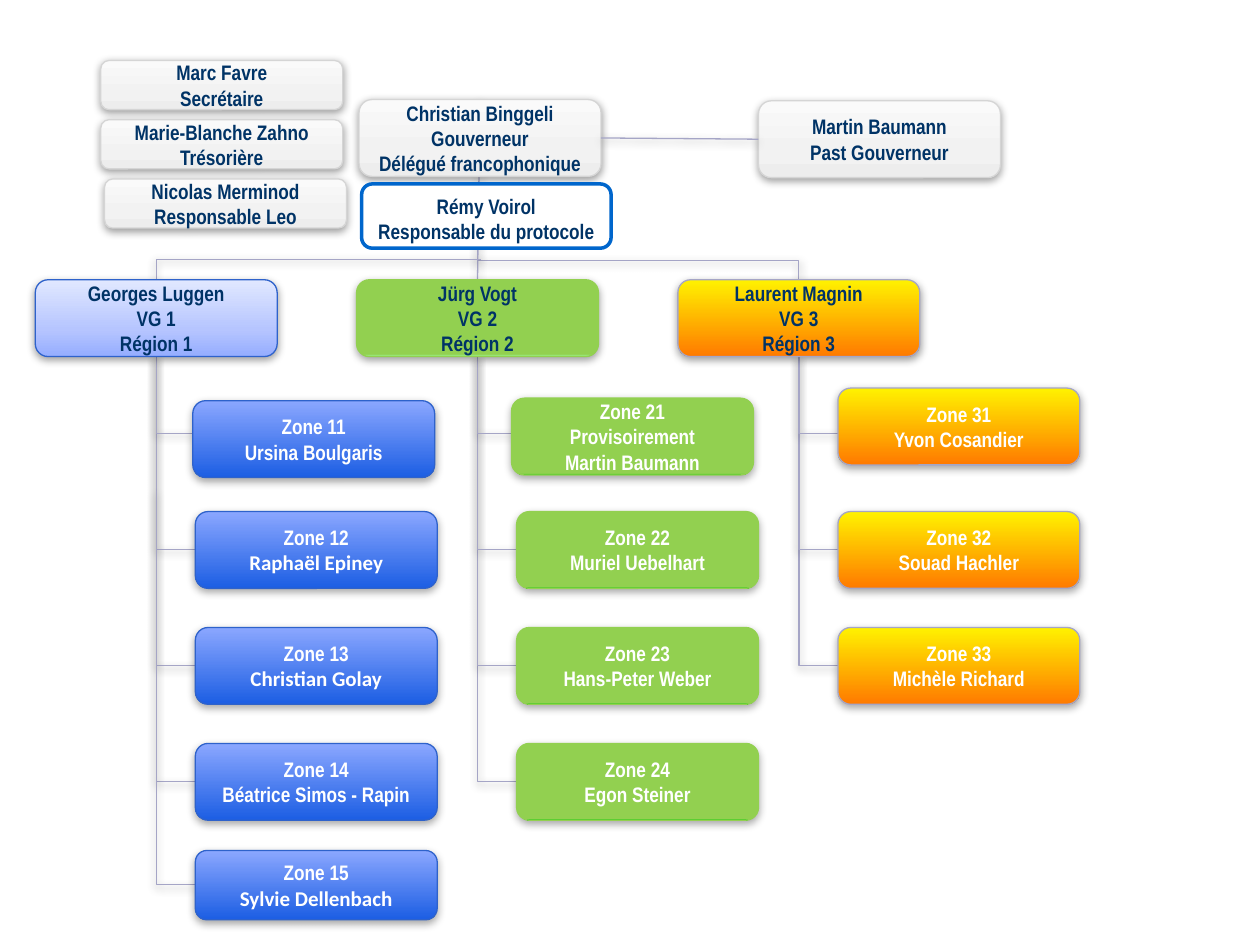
"""Build the district organisation chart slide."""
import math
from dataclasses import dataclass

import pptx
import pptx.dml.color
import pptx.enum.shapes
import pptx.enum.text
import pptx.oxml.ns
import pptx.oxml.xmlchemy
import pptx.util
from lxml import etree
from pptx.util import Inches

qn = pptx.oxml.ns.qn


@dataclass(frozen=True)
class Theme:
    """Colours, gradients and type sizes of the chart."""
    font: str = "Arial Narrow"
    name_font: str = "Calibri"
    size: int = 12
    dark: str = "003366"
    light: str = "FFFFFF"
    link: str = "A5A5C6"
    protocol: str = "0066CC"
    thin: float = 0.75
    thick: float = 2
    office: tuple = (((0, "FAFAFA"), (65, "F2F2F2"), (100, "EDEDED")), "D5D5D5")
    regions: tuple = (
        (((0, "E1E8FF"), (65, "B6C5FF"), (100, "95ADFF")), "2E62CB"),
        (((97, "92D050"), (100, "9BFD9B")), "92D050"),
        (((0, "FFF200"), (100, "FF7A00")), "A5A5C6"))
    zones: tuple = (
        (((0, "8BA7FF"), (100, "1C5EE3")), "2E62CB"),
        (((98, "92D050"), (100, "00CA00")), "92D050"),
        (((0, "FFF200"), (100, "FF7A00")), "A5A5C6"))
    main_shadow: tuple = (38, 1.6)
    zone_shadow: tuple = (35, 1.8)


THEME = Theme()
BOX_W, BOX_H, OFFICE_H = 1.92, 0.61, 0.39
COLUMN_STEP, ROW_STEP = 2.55, 0.92
REGION_TOP, TRUNK_X, ZONE_X = 2.22, 1.24, 1.55
REGION_BOTTOM = REGION_TOP + BOX_H

OFFICERS = (
    (0.8, 0.48, ("Marc Favre", "Secrétaire")),
    (0.8, 0.95, ("Marie-Blanche Zahno", "Trésorière")),
    (0.83, 1.42, ("Nicolas Merminod", "Responsable Leo")))
REGIONS = (
    (("Georges Luggen", "VG 1", "Région 1"), (1.53, 3.18),
     (("Zone 11", "Ursina Boulgaris"), ("Zone 12", "Raphaël Epiney"),
      ("Zone 13", "Christian Golay"), ("Zone 14", "Béatrice Simos - Rapin"))),
    (("Jürg Vogt", "VG 2", "Région 2"), (4.06, 3.16),
     (("Zone 21", "Provisoirement", "Martin Baumann"), ("Zone 22", "Muriel Uebelhart"),
      ("Zone 23", "Hans-Peter Weber"), ("Zone 24", "Egon Steiner"))),
    (("Laurent Magnin", "VG 3", "Région 3"), (6.65, 3.08),
     (("Zone 31", "Yvon Cosandier"), ("Zone 32", "Souad Hachler"),
      ("Zone 33", "Michèle Richard"))))
LAST_ZONE = ("Zone 15", "Sylvie Dellenbach")
CALIBRI_NAMES = {"Raphaël Epiney", "Christian Golay", "Sylvie Dellenbach"}


def rgb(value):
    """Return a colour object for a hex string."""
    return pptx.dml.color.RGBColor.from_string(value)


def set_line(line, color, width):
    """Give an outline its colour and width in points."""
    line.color.rgb = rgb(color)
    line.width = pptx.util.Pt(width)


def add_color(parent, color):
    """Append a colour element and return it."""
    return etree.SubElement(parent, qn("a:srgbClr"), val=color)


def add_shadow(owner, shadow):
    """Give a shape or connector a soft shadow below it."""
    opacity, distance = shadow
    properties = owner._element.spPr
    effects = properties.find(qn("a:effectLst"))
    if effects is None:
        effects = etree.SubElement(properties, qn("a:effectLst"))
    outer = etree.SubElement(
        effects, qn("a:outerShdw"), blurRad=str(pptx.util.Pt(5)),
        dist=str(pptx.util.Pt(distance)), dir="5400000", rotWithShape="0")
    etree.SubElement(add_color(outer, "000000"), qn("a:alpha"), val=str(opacity * 1000))


def fill_gradient(shape, stops):
    """Fill a shape from top to bottom through the given stops."""
    shape.fill.gradient()
    shape.fill.gradient_angle = 270
    stop_list = shape._element.spPr.find(".//" + qn("a:gsLst"))
    for old_stop in list(stop_list):
        stop_list.remove(old_stop)
    for position, color in stops:
        add_color(etree.SubElement(stop_list, qn("a:gs"), pos=str(position * 1000)), color)


def write_lines(shape, lines, color):
    """Write centred bold lines, one paragraph each."""
    frame = shape.text_frame
    for index, line in enumerate(lines):
        paragraph = frame.paragraphs[0] if index == 0 else frame.add_paragraph()
        paragraph.alignment = pptx.enum.text.PP_ALIGN.CENTER
        run = paragraph.add_run()
        run.text = line
        run.font.color.rgb = rgb(color)
        face = THEME.name_font if line in CALIBRI_NAMES else THEME.font
        for attribute, value in {"name": face, "size": pptx.util.Pt(THEME.size),
                                 "bold": True}.items():
            setattr(run.font, attribute, value)


def add_round_box(slide, left, top, width, height):
    """Add a rounded rectangle without the default shadow."""
    box = slide.shapes.add_shape(
        pptx.enum.shapes.MSO_SHAPE.ROUNDED_RECTANGLE,
        Inches(left), Inches(top), Inches(width), Inches(height))
    box.shadow.inherit = False
    return box


def add_post(slide, left, top, lines, look, height=BOX_H, color=THEME.dark,
             shadow=THEME.main_shadow):
    """Add one gradient box for a post in the organisation."""
    post = add_round_box(slide, left, top, BOX_W, height)
    stops, outline = look
    fill_gradient(post, stops)
    set_line(post.line, outline, THEME.thin)
    add_shadow(post, shadow)
    for attribute, value in {
            "margin_left": 0, "margin_right": 0, "margin_top": 0, "margin_bottom": 0,
            "word_wrap": False,
            "vertical_anchor": pptx.enum.text.MSO_ANCHOR.MIDDLE}.items():
        setattr(post.text_frame, attribute, value)
    write_lines(post, lines, color)
    return post


def add_zone(slide, left, top, lines, look, height=BOX_H):
    """Add a zone box with light text."""
    return add_post(slide, left, top, lines, look, height, THEME.light, THEME.zone_shadow)


def add_protocol(slide):
    """Add the outlined box of the protocol officer."""
    protocol = add_round_box(slide, 2.87, 1.46, 1.98, 0.51)
    protocol.fill.solid()
    protocol.fill.fore_color.rgb = rgb(THEME.light)
    set_line(protocol.line, THEME.protocol, THEME.thick)
    protocol.text_frame.word_wrap = True
    protocol.text_frame.vertical_anchor = pptx.enum.text.MSO_ANCHOR.TOP
    write_lines(protocol, ("Rémy Voirol", "Responsable du protocole"), THEME.dark)


def add_link(slide, start, finish, kind=pptx.enum.shapes.MSO_CONNECTOR.STRAIGHT):
    """Add a connector between two points."""
    link = slide.shapes.add_connector(kind, *(Inches(value) for value in (*start, *finish)))
    set_line(link.line, THEME.link, THEME.thin)
    add_shadow(link, THEME.main_shadow)
    return link


def add_elbow(slide, start, finish, turn, preset="bentConnector2"):
    """Add a bent connector whose frame is turned about its centre."""
    center = [(a + b) / 2 for a, b in zip(start, finish)]
    cos, sin = math.cos(math.radians(turn)), math.sin(math.radians(turn))
    u, v = start[0] - center[0], start[1] - center[1]
    du, dv = u * cos + v * sin, v * cos - u * sin
    elbow = add_link(slide, (center[0] + du, center[1] + dv),
                     (center[0] - du, center[1] - dv),
                     pptx.enum.shapes.MSO_CONNECTOR.ELBOW)
    properties = elbow._element.spPr
    properties.find(qn("a:xfrm")).set("rot", str(turn * 60000))
    properties.find(qn("a:prstGeom")).set("prst", preset)


def main():
    """Build and save the slide."""
    deck = pptx.Presentation()
    deck.slide_width, deck.slide_height = Inches(10), Inches(7.5)
    slide = deck.slides.add_slide(deck.slide_layouts[6])

    for column, (_, _, zones) in enumerate(REGIONS):
        shift = column * COLUMN_STEP
        for row in reversed(range(len(zones))):
            add_elbow(slide, (ZONE_X + shift, 3.44 + row * ROW_STEP),
                      (TRUNK_X + shift, REGION_BOTTOM), 180)
    add_elbow(slide, (6.34, REGION_TOP), (3.79, 1.91), 90, "bentConnector3")
    spine = add_link(slide, (3.78, REGION_TOP), (3.8, 0.79))
    add_elbow(slide, (TRUNK_X, REGION_TOP), (3.82, 2.06), 90)

    governor = add_post(slide, 2.85, 0.79, (
        "Christian Binggeli", "Gouverneur", "Délégué francophonique"), THEME.office)
    past_governor = add_post(slide, 6.02, 0.8, ("Martin Baumann", "Past Gouverneur"),
                             THEME.office)
    heads = []
    for column, (head, first_place, zones) in enumerate(REGIONS):
        shift = column * COLUMN_STEP
        heads.append(add_post(slide, 0.28 + shift, REGION_TOP, head, THEME.regions[column]))
        for row, zone in enumerate(zones):
            place = (ZONE_X + shift, 3.14 + row * ROW_STEP) if row else first_place
            add_zone(slide, *place, zone, THEME.zones[column])
    spine.begin_connect(heads[1], 0)
    spine.end_connect(governor, 0)

    succession = add_link(slide, (4.77, 1.1), (6.02, 1.1))
    succession.begin_connect(governor, 3)
    succession.end_connect(past_governor, 1)
    for left, top, lines in OFFICERS:
        add_post(slide, left, top, lines, THEME.office, OFFICE_H)
    add_protocol(slide)
    add_elbow(slide, (ZONE_X, 7.02), (TRUNK_X, 3.9), 180)
    add_zone(slide, ZONE_X, 6.75, LAST_ZONE, THEME.zones[0], 0.55)
    deck.save("out.pptx")


if __name__ == "__main__":
    main()
